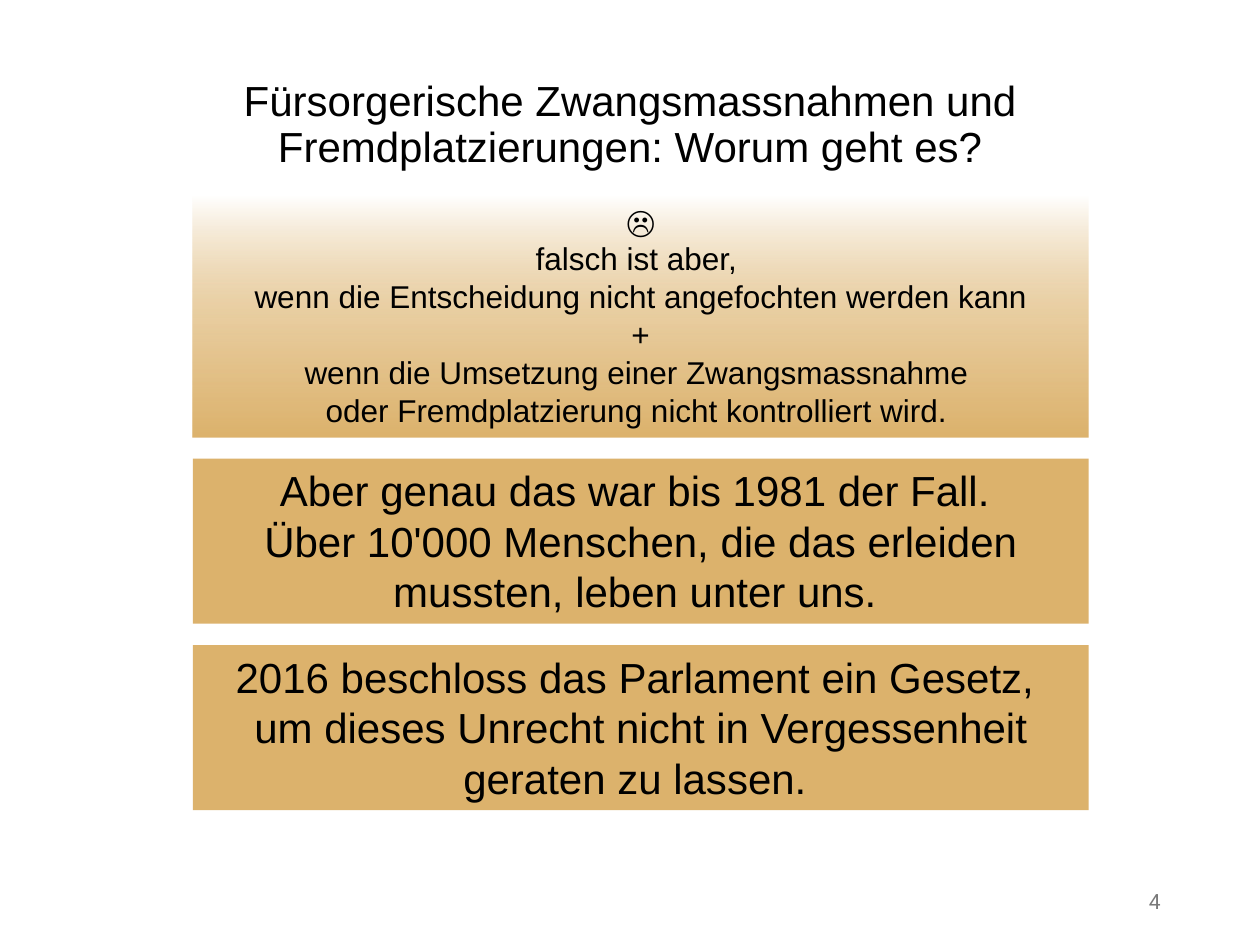
from copy import deepcopy
from pptx import Presentation
from pptx.dml.color import RGBColor
from pptx.enum.shapes import MSO_SHAPE
from pptx.enum.text import MSO_ANCHOR, PP_ALIGN
from pptx.oxml.ns import qn
from pptx.util import Inches, Pt
from lxml import etree


def rgb(value):
    return RGBColor.from_string(value)


def add_text(p, text, size, color="000000", font="Arial", align=PP_ALIGN.CENTER):
    p.alignment = align
    r = p.add_run()
    r.text = text
    r.font.size = Pt(size)
    r.font.name = font
    r.font.color.rgb = rgb(color)


GOLD = "DCB26C"

prs = Presentation()
prs.slide_width, prs.slide_height = Inches(10), Inches(7.5)
s = prs.slides.add_slide(prs.slide_layouts[5])

title = s.shapes.title
title.left, title.top = Inches(0.69), Inches(0.4)
title.width, title.height = Inches(8.62), Inches(1.2)
tf = title.text_frame
tf.word_wrap = True
tf.vertical_anchor = MSO_ANCHOR.MIDDLE
p = tf.paragraphs[0]
p.line_spacing = 0.9
add_text(p, "Fürsorgerische Zwangsmassnahmen und Fremdplatzierungen: Worum geht es?", 24)

boxes = [
    (1.55, 1.92, 18, [
        "☹",
        "falsch ist aber, ",
        "wenn die Entscheidung nicht angefochten werden kann",
        "+",
        "wenn die Umsetzung einer Zwangsmassnahme ",
        "oder Fremdplatzierung nicht kontrolliert wird. ",
    ]),
    (3.64, 1.31, 24, [
        "Aber genau das war bis 1981 der Fall. ",
        "Über 10'000 Menschen, die das erleiden mussten, leben unter uns. ",
    ]),
    (5.12, 1.31, 24, [
        "2016 beschloss das Parlament ein Gesetz, ",
        "um dieses Unrecht nicht in Vergessenheit geraten zu lassen. ",
    ]),
]
panels = []
for top, height, size, lines in boxes:
    sp = s.shapes.add_shape(MSO_SHAPE.RECTANGLE, Inches(1.53), Inches(top), Inches(7.11), Inches(height))
    sp.shadow.inherit = False
    sp.fill.solid()
    sp.fill.fore_color.rgb = rgb(GOLD)
    sp.line.fill.background()
    tf = sp.text_frame
    tf.word_wrap = True
    tf.vertical_anchor = MSO_ANCHOR.TOP
    for i, line in enumerate(lines):
        p = tf.add_paragraph() if i else tf.paragraphs[0]
        add_text(p, line, size)
    panels.append(sp)

fill = panels[0].fill
fill.gradient()
fill.gradient_angle = 270
for stop, color, position in zip(fill.gradient_stops, ("FFFFFF", GOLD), (0, 1)):
    stop.color.rgb = rgb(color)
    stop.position = position
last = panels[0]._element.spPr.findall(".//" + qn("a:gs"))[-1]
middle = deepcopy(last)
middle.set("pos", "52000")
etree.SubElement(middle[0], qn("a:alpha")).set("val", "66000")
last.addprevious(middle)

number = s.shapes.add_textbox(Inches(7.06), Inches(6.95), Inches(2.25), Inches(0.4))
tf = number.text_frame
tf.word_wrap = True
tf.vertical_anchor = MSO_ANCHOR.MIDDLE
add_text(tf.paragraphs[0], "4", 12, "797979", "Roboto", PP_ALIGN.RIGHT)

prs.save("out.pptx")
